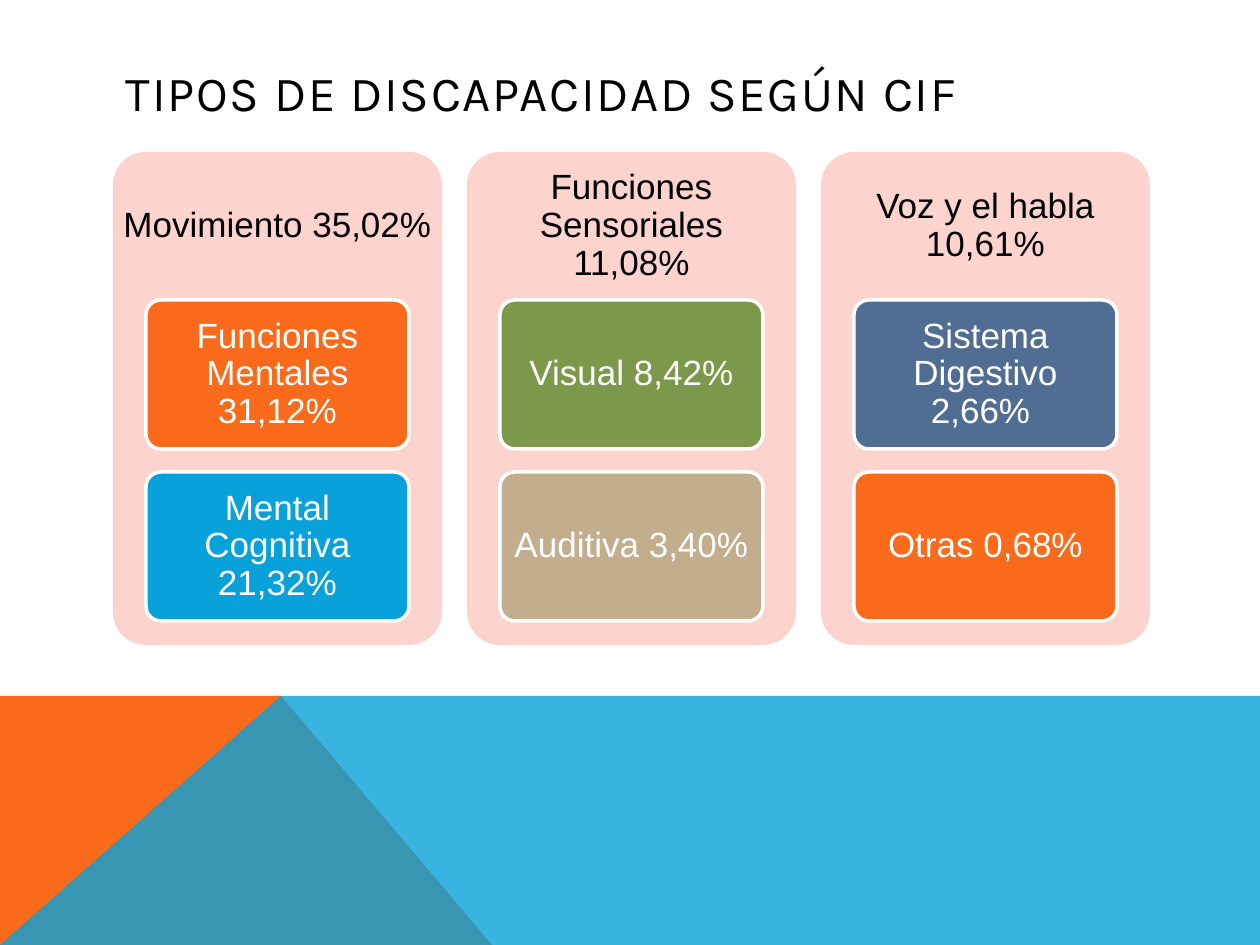
from lxml import etree
from pptx import Presentation
from pptx import util as u
from pptx.dml.color import RGBColor
from pptx.enum import shapes, text
from pptx.oxml.ns import qn

PX = u.Inches(1) / 126


def px(length):
    return u.Emu(round(length * PX))


def color(value):
    return RGBColor.from_string(value)


class SlideBuilder:
    TITLE = {"name": "Karla", "size": u.Pt(28)}
    BODY = {"name": "Arial", "size": u.Pt(20)}
    CORNER = 0.1

    def __init__(self, slide):
        self.slide = slide

    def add_words(self, shape, words, style, ink, margins, paragraph_format):
        frame = shape.text_frame
        left, top = margins
        frame_format = {
            "word_wrap": True, "vertical_anchor": text.MSO_ANCHOR.MIDDLE,
            "margin_left": px(left), "margin_right": px(left),
            "margin_top": px(top), "margin_bottom": px(top),
        }
        for name, value in frame_format.items():
            setattr(frame, name, value)
        paragraph = frame.paragraphs[0]
        for name, value in paragraph_format.items():
            setattr(paragraph, name, value)
        run = paragraph.add_run()
        run.text = words
        for name, value in style.items():
            setattr(run.font, name, value)
        run.font.color.rgb = color(ink)
        return run

    def add_label(self, shape, words, ink, margins):
        centred = {"alignment": text.PP_ALIGN.CENTER, "line_spacing": 0.9}
        self.add_words(shape, words, self.BODY, ink, margins, centred)

    def paint(self, shape, fill, outline=None):
        shape.shadow.inherit = False
        shape.fill.solid()
        shape.fill.fore_color.rgb = color(fill)
        if outline:
            shape.line.color.rgb = color(outline)
            shape.line.width = u.Pt(2)
        else:
            shape.line.fill.background()

    def polygon(self, points, fill, opacity=100):
        builder = self.slide.shapes.build_freeform(*points[0], scale=PX)
        builder.add_line_segments(points[1:], close=True)
        shape = builder.convert_to_shape()
        self.paint(shape, fill)
        if opacity < 100:
            tint = shape.element.spPr.find(".//" + qn("a:srgbClr"))
            etree.SubElement(tint, qn("a:alpha"), val=str(opacity * 1000))

    def title(self, words, box):
        shape = self.slide.shapes.add_textbox(*map(px, box))
        run = self.add_words(shape, words, self.TITLE, "000000", (13, 6), {})
        run.font._element.set("spc", "100")

    def panel(self, box, fill, outline=None):
        shape = self.slide.shapes.add_shape(
            shapes.MSO_SHAPE.ROUNDED_RECTANGLE, *map(px, box))
        shape.adjustments[0] = self.CORNER
        self.paint(shape, fill, outline)
        return shape

    def heading(self, words, box):
        shape = self.slide.shapes.add_textbox(*map(px, box))
        self.add_label(shape, words, "000000", (10, 10))

    def tile(self, words, box, fill):
        shape = self.panel(box, fill, "FFFFFF")
        self.add_label(shape, words, "FFFFFF", (8, 5))


COLUMNS = [
    ("Movimiento 35,02%", [("Funciones Mentales 31,12%", "F96A1B"),
                           ("Mental Cognitiva 21,32%", "08A1D9")]),
    ("Funciones Sensoriales 11,08%", [("Visual 8,42%", "7C984A"),
                                      ("Auditiva 3,40%", "C2AD8D")]),
    ("Voz y el habla 10,61%", [("Sistema Digestivo 2,66% ", "506E94"),
                               ("Otras 0,68%", "F96A1B")]),
]


def main():
    presentation = Presentation()
    presentation.slide_width, presentation.slide_height = px(1260), px(945)
    slide = presentation.slides.add_slide(presentation.slide_layouts[6])
    builder = SlideBuilder(slide)

    # Bottom band
    builder.polygon([(0, 945), (0, 696), (281, 696), (492, 945)], "F96A1B")
    builder.polygon([(0, 945), (281, 696), (1260, 696), (1260, 945)],
                    "08A1D9", opacity=80)

    # Title
    builder.title("TIPOS DE DISCAPACIDAD SEGÚN CIF", (113, 54, 1036, 76))

    # Columns: a panel with a heading and its tiles
    top, width, inset = 152, 329, 33
    for column, (heading, tiles) in enumerate(COLUMNS):
        left = 113 + 354 * column
        builder.panel((left, top, width, 493), "FDD4CD")
        builder.heading(heading, (left, top, width, 148))
        for row, (words, fill) in enumerate(tiles):
            box = (left + inset, top + 148 + 172 * row, width - 2 * inset, 149)
            builder.tile(words, box, fill)

    presentation.save("out.pptx")


if __name__ == "__main__":
    main()
